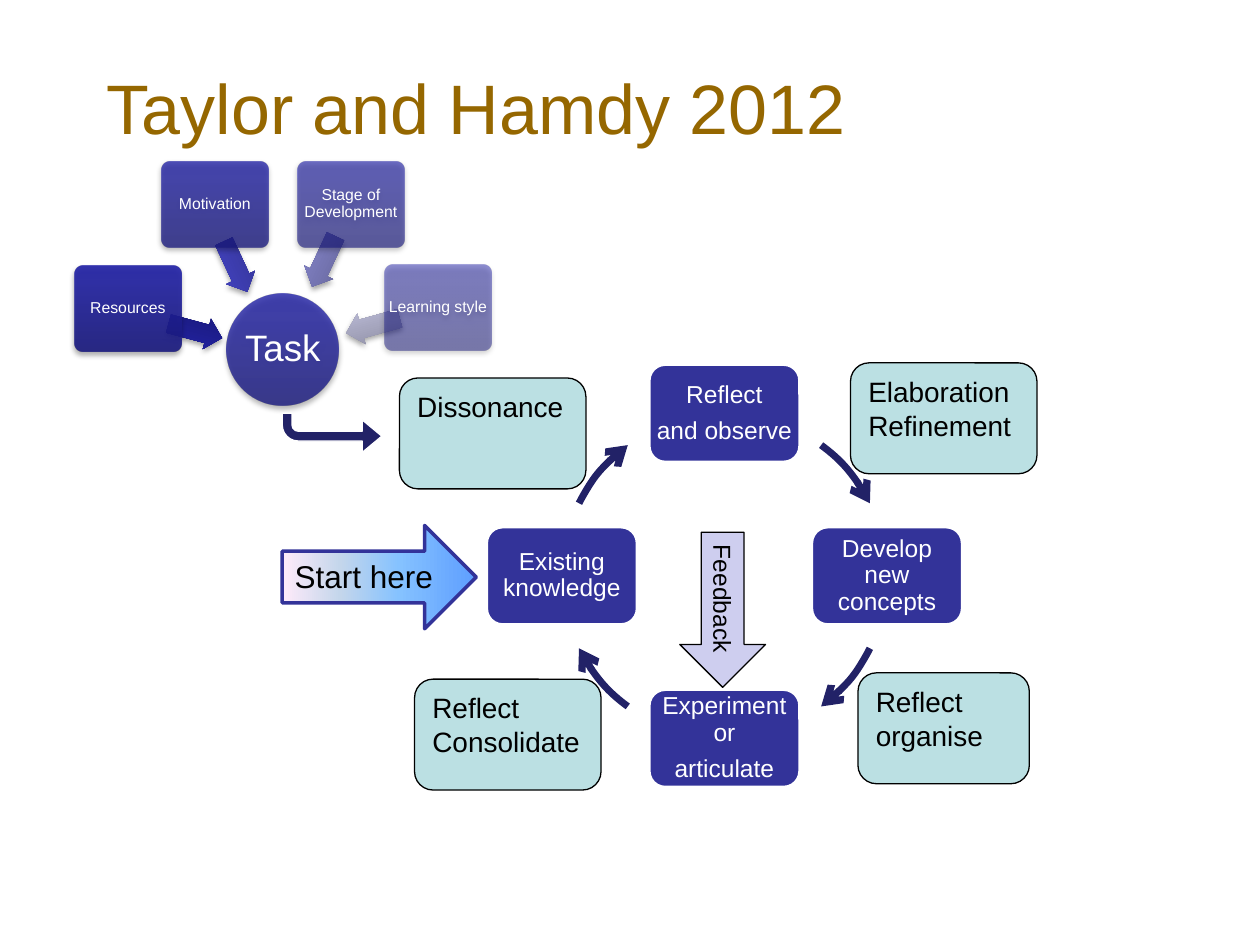
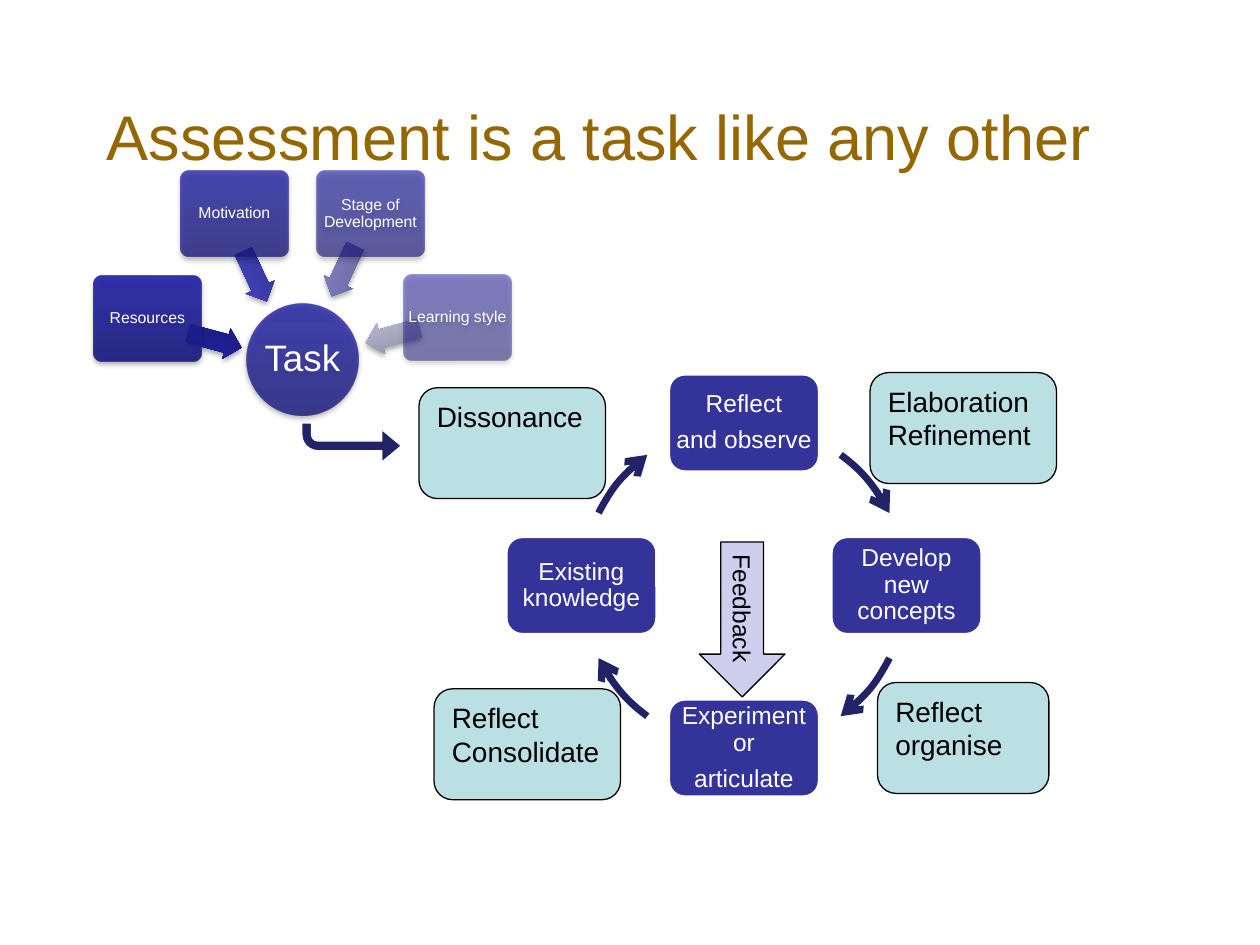
from typing import NamedTuple

from pptx import Presentation
from pptx.dml.color import RGBColor
from pptx.enum.shapes import MSO_SHAPE
from pptx.enum.text import MSO_ANCHOR, PP_ALIGN
from pptx.oxml.ns import qn
from pptx.oxml.xmlchemy import OxmlElement
from pptx.util import Inches, Pt

ROUND, OVAL, ARC = MSO_SHAPE.ROUNDED_RECTANGLE, MSO_SHAPE.OVAL, MSO_SHAPE.ARC
RIGHT, LEFT, BENT = MSO_SHAPE.RIGHT_ARROW, MSO_SHAPE.LEFT_ARROW, MSO_SHAPE.BENT_ARROW
TOP, MIDDLE, BOTTOM = MSO_ANCHOR.TOP, MSO_ANCHOR.MIDDLE, MSO_ANCHOR.BOTTOM
CENTER = PP_ALIGN.CENTER

FONT = "Arial"
WHITE = RGBColor(0xFF, 0xFF, 0xFF)
BLACK = RGBColor(0x00, 0x00, 0x00)
GOLD = RGBColor(0x95, 0x67, 0x00)
INDIGO = RGBColor(0x33, 0x33, 0x99)
NAVY = RGBColor(0x22, 0x22, 0x67)
AQUA = RGBColor(0xBB, 0xE0, 0xE3)
LILAC = RGBColor(0xCE, 0xCE, 0xEF)

# The slide is a grid of 100 columns by 75 rows
WIDTH, HEIGHT = Inches(10), Inches(7.5)
COL, ROW = WIDTH / 100, HEIGHT / 75

# Gradients: (position, colour) stops
GLASS = [(0, "1B1B7E"), (80, "2323A3"), (100, "2020A6")]
SKY = [(0, "5E9EFF"), (40, "85C2FF"), (70, "C4D6EB"), (100, "FFEBFA")]


class Box(NamedTuple):
    x: float
    y: float
    w: float
    h: float

    def move(self, dx: float, dy: float) -> "Box":
        return Box(self.x + dx, self.y + dy, self.w, self.h)

    def size(self) -> list[int]:
        return [round(v * unit) for v, unit in zip(self, (COL, ROW, COL, ROW))]


class Note(NamedTuple):
    text: str
    x: float
    y: float
    w: float = 14.8


class Factor(NamedTuple):
    text: str
    x: float
    y: float
    alpha: int
    tip_x: float
    tip_y: float
    turn: float
    tints: tuple[str, str, str]


class Page(NamedTuple):
    title: str
    size: int
    base: float
    dx: float
    dy: float
    start: bool


PAGES = [
    Page("Taylor and Hamdy 2012", 40, 12.3, 0, 0, True),
    Page("Assessment is a task like any other", 36, 14.2, 1.55, 0.77, False),
]
STEPS = ["Reflect\nand observe", "Develop new concepts",
         "Experiment or\narticulate", "Existing knowledge"]
NOTES = [
    Note("Reflect\norganise", 68.1, 53.4, 13.6),
    Note("Reflect\nConsolidate", 32.9, 53.9),
    Note("Elaboration\nRefinement", 67.5, 28.8),
    Note("Dissonance", 31.7, 30),
]
FACTORS = [
    Factor("Resources", 5.9, 21.1, 90, 13.3, 25, 195, ("191978", "21219C", "1F1F9F")),
    Factor("Motivation", 12.8, 12.8, 77, 16.5, 19.9, 245, ("333392", "4242BE", "4040C1")),
    Factor("Stage of Development", 23.6, 12.8, 63, 23.5, 19.5, 295,
           ("636396", "8080C3", "8080C5")),
    Factor("Learning style", 30.5, 21, 50, 27.4, 24.6, 344.5,
           ("8C8CA1", "B6B6D1", "B6B6D2")),
]

# Cycle: centre, radius and half the sweep of each arrow
MID_X, MID_Y, RAD = 57.5, 45.7, 12.9
NODE_W, NODE_H = 12, 7.8
ARCS, SWEEP = (320, 40, 140, 220), 13.5


def add_child(parent, tag: str, **attrs):
    node = OxmlElement(tag)
    for key, value in attrs.items():
        node.set(key, str(value))
    parent.append(node)
    return node


def write(shape, text: str, size: float, color: RGBColor, anchor=TOP, pad=None) -> None:
    """Fill in text; a given pad means tight, centred text."""
    frame = shape.text_frame
    frame.text = text
    frame.word_wrap = True
    frame.vertical_anchor = anchor
    if pad is not None:
        frame.margin_left = frame.margin_right = Inches(pad)
        frame.margin_top = frame.margin_bottom = Inches(pad)
    for para in frame.paragraphs:
        para.alignment = PP_ALIGN.LEFT if pad is None else CENTER
        if pad is not None:
            para.line_spacing = 0.9
            para.space_after = Pt(round(size * 0.39, 1))
        para.font.name = FONT
        para.font.size = Pt(size)
        para.font.color.rgb = color


def draw(slide, kind, box: Box, fill=None, line=None, weight=0.75, adj=(), turn=0):
    shape = slide.shapes.add_shape(kind, *box.size())
    shape.shadow.inherit = False
    shape.rotation = turn
    for i, value in enumerate(adj):
        shape.adjustments[i] = value
    if fill is None:
        shape.fill.background()
    else:
        shape.fill.solid()
        shape.fill.fore_color.rgb = fill
    if line is None:
        shape.line.fill.background()
    else:
        shape.line.color.rgb = line
        shape.line.width = Pt(weight)
    return shape


def blend(shape, stops, angle: float, alpha: int = 100) -> None:
    shape.fill.gradient()
    shape.fill.gradient_angle = angle
    group = shape.element.spPr.find(qn("a:gradFill")).find(qn("a:gsLst"))
    for old in list(group):
        group.remove(old)
    for pos, color in stops:
        stop = add_child(group, "a:gs", pos=pos * 1000)
        tint = add_child(stop, "a:srgbClr", val=color)
        if alpha < 100:
            add_child(tint, "a:alpha", val=alpha * 1000)


def glass(slide, kind, box: Box, stops, alpha=100, adj=(), turn=0):
    """Shape with a vertical gradient and a soft shadow."""
    shape = draw(slide, kind, box, adj=adj, turn=turn)
    blend(shape, stops, 90, alpha)
    effects = shape.element.spPr.find(qn("a:effectLst"))
    shade = add_child(effects, "a:outerShdw", blurRad=Pt(3.1), dist=Pt(1.8),
                      dir=90 * 60000, rotWithShape=0)
    add_child(add_child(shade, "a:srgbClr", val="000000"), "a:alpha", val=35000)
    return shape


def add_title(slide, page: Page) -> None:
    box = Box(7.5, 4.2, 85, page.base - 4.2)
    write(slide.shapes.add_textbox(*box.size()), page.title, page.size, GOLD, BOTTOM)


def add_cycle(slide, dx: float, dy: float) -> None:
    spots = [(0, -1), (1, 0), (0, 1), (-1, 0)]
    ring = Box(MID_X - RAD, MID_Y - RAD, 2 * RAD, 2 * RAD).move(dx, dy)
    for text, (right, down), mid in zip(STEPS, spots, ARCS):
        box = Box(MID_X + right * RAD - NODE_W / 2, MID_Y + down * RAD - NODE_H / 2,
                  NODE_W, NODE_H)
        node = draw(slide, ROUND, box.move(dx, dy), INDIGO, WHITE, 2)
        write(node, text, 14, WHITE, MIDDLE, 0.02)
        # Arc angles are stored in 1/60000 degree, adjustments in 1/100000
        ends = [(mid + side * SWEEP) * 0.6 for side in (-1, 1)]
        arc = draw(slide, ARC, ring, line=NAVY, weight=4, adj=ends)
        add_child(arc.element.spPr.find(qn("a:ln")), "a:tailEnd", type="arrow")


def add_notes(slide, dx: float, dy: float) -> None:
    for note in NOTES:
        box = Box(note.x, note.y, note.w, 8.8).move(dx, dy)
        write(draw(slide, ROUND, box, AQUA, BLACK), note.text, 16, BLACK)
    box = Box(51.2, 45, 12.3, 6.8).move(dx, dy)
    write(draw(slide, RIGHT, box, LILAC, BLACK, turn=90), "Feedback", 14, BLACK)


def add_start(slide) -> None:
    arrow = draw(slide, RIGHT, Box(22.4, 41.7, 15.4, 8.2), line=INDIGO, weight=2)
    blend(arrow, SKY, 180)
    write(arrow, "Start here", 18, BLACK)


def add_task(slide, dx: float, dy: float) -> None:
    task = glass(slide, OVAL, Box(18, 23.3, 8.9, 8.9).move(dx, dy), GLASS, 80)
    write(task, "Task", 21, WHITE, MIDDLE, 0)
    for item in FACTORS:
        tip = Box(item.tip_x, item.tip_y, 4.4, 2.5).move(dx, dy)
        stops = list(zip((0, 80, 100), item.tints))
        glass(slide, LEFT, tip, stops, adj=(0.6, 0.5), turn=item.turn)
        card = Box(item.x, item.y, 8.5, 6.8).move(dx, dy)
        shape = glass(slide, ROUND, card, GLASS, item.alpha, adj=(0.1,))
        write(shape, item.text, 9, WHITE, MIDDLE, 0)
    # Bent arrow from the task to the first note
    bend = draw(slide, BENT, Box(22.4, 32.8, 7.9, 3.1).move(dx, dy), NAVY, WHITE,
                adj=(0.25, 0.416, 0.5, 0.411), turn=180)
    bend.element.spPr.find(qn("a:xfrm")).set("flipH", "1")


def main() -> None:
    deck = Presentation()
    deck.slide_width, deck.slide_height = WIDTH, HEIGHT
    for page in PAGES:
        slide = deck.slides.add_slide(deck.slide_layouts[6])
        add_title(slide, page)
        add_cycle(slide, page.dx, page.dy)
        add_notes(slide, page.dx, page.dy)
        if page.start:
            add_start(slide)
        add_task(slide, page.dx, page.dy)
    deck.save("out.pptx")


if __name__ == "__main__":
    main()
